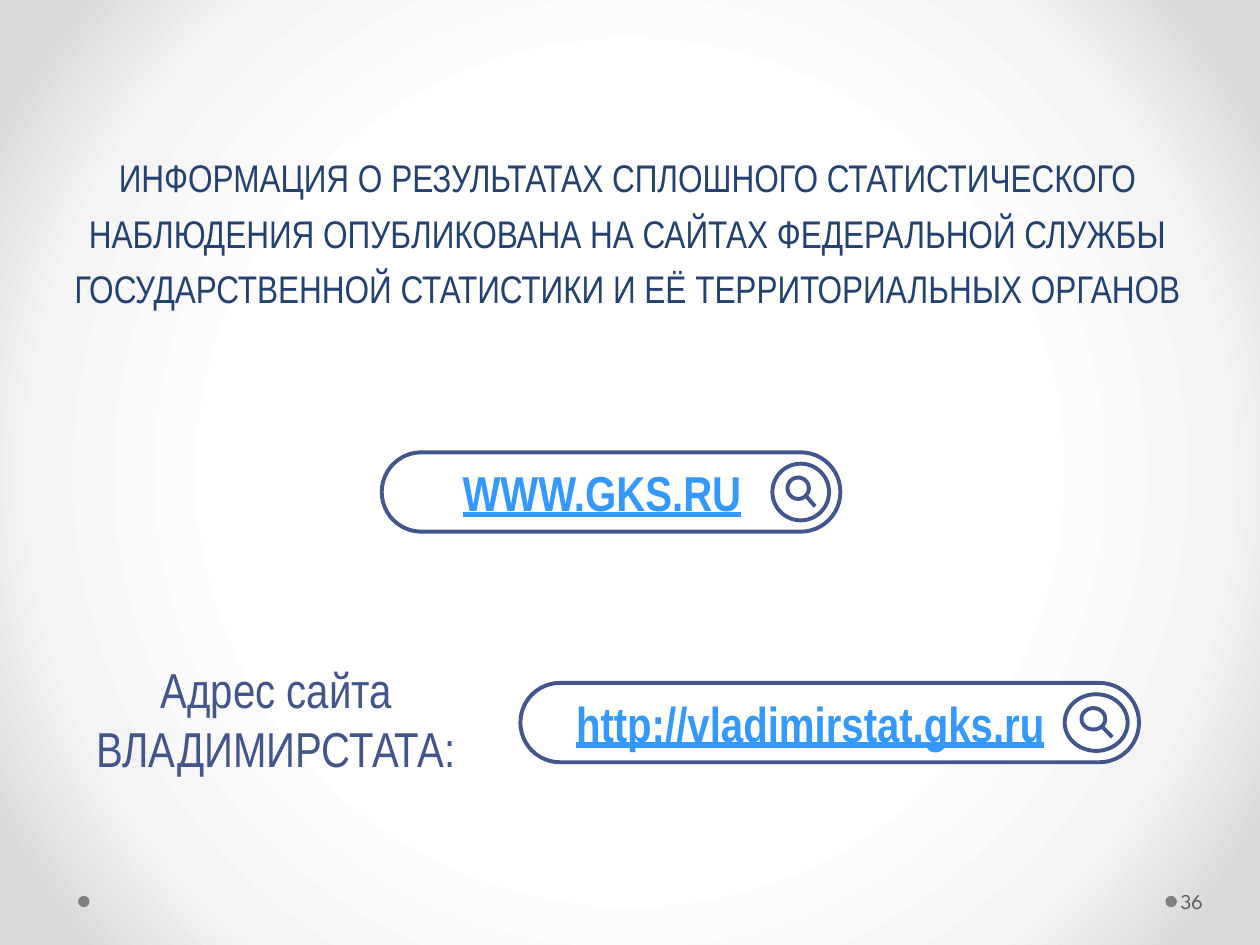
from pptx import Presentation
from pptx import util as u
from pptx.dml.color import RGBColor
from pptx.enum import shapes as s, text as t
from pptx.oxml import parse_xml
from pptx.oxml.ns import qn
from lxml import etree

NARROW = "Arial Narrow"
BLUE = "42568D"
NS = ('xmlns:a="http://schemas.openxmlformats.org/drawingml/2006/main" '
      'xmlns:p="http://schemas.openxmlformats.org/presentationml/2006/main"')


def color(code):
    return RGBColor.from_string(code)


def inches(*sizes):
    return [u.Inches(size) for size in sizes]


def backdrop(slide, stops):
    """Fill the background with a round gradient from the centre outwards."""
    marks = "".join(f'<a:gs pos="{pos * 1000}"><a:srgbClr val="{code}"/></a:gs>'
                    for pos, code in stops)
    slide.element.cSld.insert(0, parse_xml(
        f'<p:bg {NS}><p:bgPr><a:gradFill rotWithShape="1"><a:gsLst>{marks}</a:gsLst>'
        '<a:path path="circle"><a:fillToRect l="50000" t="50000" r="50000" b="50000"/>'
        '</a:path></a:gradFill><a:effectLst/></p:bgPr></p:bg>'))


def write(box, words, size, code, face=NARROW, align=t.PP_ALIGN.CENTER,
          anchor=t.MSO_ANCHOR.MIDDLE):
    frame = box.text_frame
    frame.word_wrap = True
    frame.auto_size = t.MSO_AUTO_SIZE.NONE
    frame.vertical_anchor = anchor
    frame.text = words
    para = frame.paragraphs[0]
    para.alignment = align
    font = para.font
    font.name, font.size = face, u.Pt(size)
    font.color.rgb = color(code)
    return para


def label(slide, place, words, size, code, left, **style):
    box = slide.shapes.add_textbox(*inches(*place))
    write(box, words, size, code, **style)
    box.text_frame.margin_left = u.Inches(left)


def outline(parent, kind, *place):
    shape = parent.shapes.add_shape(kind, *inches(*place))
    shape.shadow.inherit = False
    shape.fill.solid()
    shape.fill.fore_color.rgb = color("FFFFFF")
    shape.line.color.rgb = color(BLUE)
    shape.line.width = u.Pt(2.25)
    return shape


def dot(slide, left):
    shape = outline(slide, s.MSO_SHAPE.OVAL, left, 7.11, 0.09, 0.09)
    shape.fill.fore_color.rgb = color("808080")
    shape.line.fill.background()


def search(slide, left, top, width, address, indent, ring):
    """Draw a search bar; ring is the width of its magnifier button."""
    group = slide.shapes.add_group_shape()
    bar = outline(group, s.MSO_SHAPE.ROUNDED_RECTANGLE, left, top, width, 0.63)
    bar.adjustments[0] = 0.5
    para = write(bar, address, 28, "3399FF", align=t.PP_ALIGN.LEFT)
    para.font.bold = para.font.underline = True
    bar.text_frame.margin_left = u.Inches(indent)

    x, y = left + width - ring - 0.09, top + 0.09
    scale = ring / 0.45
    outline(group, s.MSO_SHAPE.OVAL, x, y, ring, 0.45)
    outline(group, s.MSO_SHAPE.OVAL, x + 0.12 * scale, y + 0.11, 0.17 * scale, 0.17)
    grip = group.shapes.add_connector(
        s.MSO_CONNECTOR.STRAIGHT,
        *inches(x + 0.27 * scale, y + 0.26, x + 0.34 * scale, y + 0.34))
    grip.line.color.rgb = color(BLUE)
    grip.line.width = u.Pt(2.25)
    etree.SubElement(grip.element.spPr, qn("a:effectLst"))


def heading(slide, words):
    title = slide.shapes.title
    title.left, title.top, title.width, title.height = inches(0.21, 1.14, 9.54, 1.38)
    para = write(title, words, 22, "234271", anchor=t.MSO_ANCHOR.BOTTOM)
    para.line_spacing = 1.2


def main():
    deck = Presentation()
    deck.slide_width, deck.slide_height = inches(10, 7.5)
    slide = deck.slides.add_slide(deck.slide_layouts[5])
    backdrop(slide, [(50, "FFFFFF"), (76, "F4F4F4"), (92, "DADADA")])
    for left in (9.25, 0.62):
        dot(slide, left)
    heading(slide, "ИНФОРМАЦИЯ О РЕЗУЛЬТАТАХ СПЛОШНОГО СТАТИСТИЧЕСКОГО "
                   "НАБЛЮДЕНИЯ ОПУБЛИКОВАНА НА САЙТАХ ФЕДЕРАЛЬНОЙ СЛУЖБЫ "
                   "ГОСУДАРСТВЕННОЙ СТАТИСТИКИ И ЕЁ ТЕРРИТОРИАЛЬНЫХ ОРГАНОВ")
    search(slide, 3.03, 3.59, 3.64, "WWW.GKS.RU", 0.55, 0.45)
    label(slide, (0.42, 5.37, 3.57, 0.66), "Адрес сайта ВЛАДИМИРСТАТА:", 28, BLUE, 0.07)
    search(slide, 4.13, 5.42, 4.91, "http://vladimirstat.gks.ru", 0.35, 0.5)
    label(slide, (9.34, 6.95, 0.61, 0.4), "36", 12, "595959", 0.03,
          face="League Spartan", align=t.PP_ALIGN.LEFT)
    deck.save("out.pptx")


if __name__ == "__main__":
    main()
